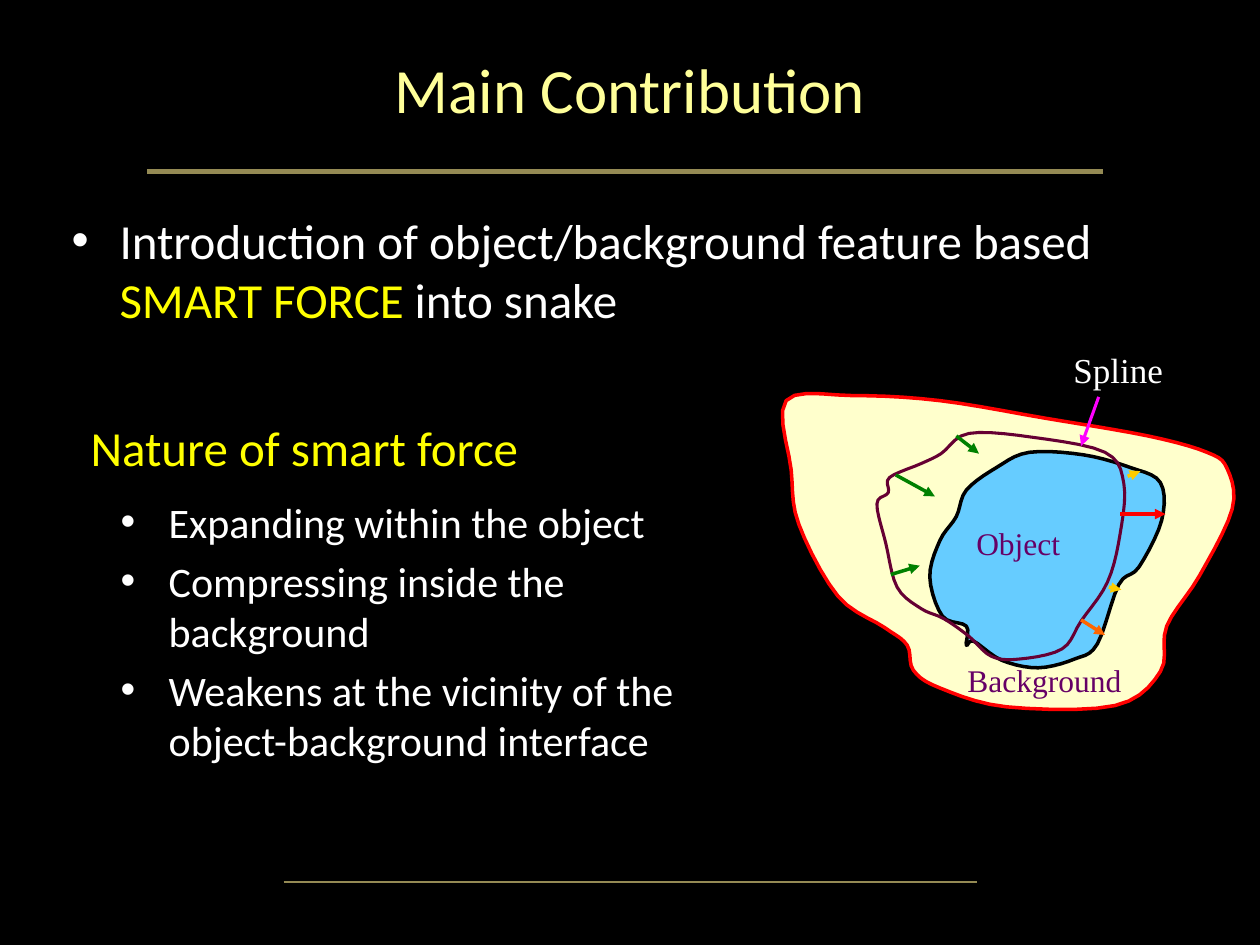
from dataclasses import dataclass
from typing import NamedTuple, Optional

from lxml.etree import SubElement as Sub
from pptx import Presentation
from pptx.dml.color import RGBColor as Rgb
from pptx.enum.shapes import MSO_CONNECTOR as Conn
from pptx.enum.text import MSO_ANCHOR as Anchor, PP_ALIGN as Align
from pptx.oxml.ns import qn
from pptx.util import Inches, Pt


@dataclass(frozen=True)
class Theme:
    sans: str = "Calibri"
    serif: str = "Times New Roman"
    black: str = "000000"
    white: str = "FFFFFF"
    yellow: str = "FFFF00"
    cream: str = "FFFF99"
    olive: str = "948A54"
    red: str = "FF0000"
    orange: str = "FF6600"
    green: str = "008000"
    gold: str = "FFCC00"
    pink: str = "FF00FF"
    purple: str = "660066"
    wine: str = "660033"
    sand: str = "FFFFCC"
    sky: str = "66CCFF"
    title: float = 36
    body: float = 28
    item: float = 24
    spline: float = 20
    label: float = 18


T = Theme()
Point = tuple[float, float]


class Line(NamedTuple):
    start: Point
    end: Point
    color: str
    width: float = 2
    arrow: bool = True


class Area(NamedTuple):
    points: list[Point]
    line: str
    fill: Optional[str] = None
    width: float = 2


class Label(NamedTuple):
    text: str
    box: tuple[float, float, float, float]
    size: float
    color: str


RULES = [
    Line((1.17, 1.36), (8.75, 1.36), T.olive, 3, False),
    Line((2.25, 7), (7.75, 7), T.olive, 1, False),
]
AREAS = [
    Area([  # background
        (6.24, 3.18), (6.28, 3.73), (6.34, 4.16), (6.65, 4.73),
        (7.02, 4.98), (7.2, 5.12), (7.25, 5.32), (7.46, 5.46),
        (7.99, 5.61), (8.85, 5.6), (9.21, 5.33), (9.26, 4.97),
        (9.52, 4.57), (9.78, 4.04), (9.74, 3.72), (9.58, 3.59),
        (9.11, 3.46), (8.3, 3.32), (7.46, 3.18), (6.77, 3.14),
    ], T.red, T.sand),
    Area([  # object
        (8.17, 3.59), (7.91, 3.71), (7.67, 3.89), (7.59, 4.1),
        (7.46, 4.29), (7.38, 4.58), (7.48, 4.89), (7.67, 4.97),
        (7.67, 5.12), (7.73, 5.09), (7.95, 5.24), (8.24, 5.3),
        (8.53, 5.23), (8.71, 5.11), (8.88, 4.64), (9.04, 4.5),
        (9.22, 4.13), (9.21, 3.83), (8.97, 3.71), (8.6, 3.61),
    ], T.black, T.sky),
    Area([  # spline
        (6.96, 4), (7.05, 3.91), (7.06, 3.79), (7.31, 3.68),
        (7.47, 3.6), (7.69, 3.44), (8.19, 3.47), (8.77, 3.59),
        (8.92, 3.84), (8.89, 4.24), (8.79, 4.62), (8.58, 4.93),
        (8.43, 5.15), (8.1, 5.23), (7.87, 5.21), (7.69, 5.05),
        (7.49, 4.91), (7.31, 4.83), (7.12, 4.66), (7.03, 4.31),
    ], T.wine, width=1.75),
]
FORCES = [
    Line((8.89, 4.08), (9.25, 4.08), T.red),
    Line((8.58, 4.92), (8.77, 5.04), T.orange),
    Line((7.11, 3.77), (7.42, 3.94), T.green),
    Line((7.07, 4.56), (7.3, 4.49), T.green),
    Line((7.59, 3.46), (7.77, 3.6), T.green),
    Line((8.95, 3.78), (9.05, 3.74), T.gold),
    Line((8.8, 4.66), (8.9, 4.68), T.gold),
]
LABELS = [
    Label("Object", (7.65, 4.11, 1, 0.4), T.label, T.purple),
    Label("Background", (7.58, 5.2, 1.58, 0.4), T.label, T.purple),
    Label("Spline", (8.42, 2.72, 1.18, 0.43), T.spline, T.white),
]
POINTER = Line((8.72, 3.15), (8.58, 3.54), T.pink, 1.75)
ITEMS = [
    "Expanding within the object",
    "Compressing inside the background",
    "Weakens at the vicinity of the object-background interface",
]


def rgb(color: str) -> Rgb:
    return Rgb.from_string(color)


def style(par, size: float, color: str, name: str = T.sans) -> None:
    font = par.font
    font.name, font.size, font.color.rgb = name, Pt(size), rgb(color)


def bullet(par, left: float) -> None:
    props = par._p.get_or_add_pPr()
    props.set("marL", str(Inches(left)))
    props.set("indent", str(Inches(-0.38)))
    Sub(props, qn("a:buFont"), typeface="Arial")
    Sub(props, qn("a:buChar"), char="•")


def add_box(slide, box: tuple, anchor=Anchor.TOP):
    frame = slide.shapes.add_textbox(*map(Inches, box)).text_frame
    frame.word_wrap, frame.vertical_anchor = True, anchor
    return frame


def add_line(slide, item: Line) -> None:
    ends = map(Inches, item.start + item.end)
    line = slide.shapes.add_connector(Conn.STRAIGHT, *ends)
    line.line.color.rgb, line.line.width = rgb(item.color), Pt(item.width)
    props = line._element.spPr
    if item.arrow:
        Sub(props.find(qn("a:ln")), qn("a:tailEnd"), type="triangle")
    Sub(props, qn("a:effectLst"))


def smooth(points: list[Point], steps: int = 5) -> list[Point]:
    """Trace a closed Catmull-Rom curve through the points."""
    def blend(a: float, b: float, c: float, d: float, t: float) -> float:
        return b + t / 2 * (c - a + t * (2 * a - 5 * b + 4 * c - d
                                         + t * (3 * (b - c) + d - a)))

    curve = []
    for i in range(len(points)):
        near = [points[(i + k) % len(points)] for k in range(-1, 3)]
        xs, ys = zip(*near)
        curve += [(blend(*xs, s / steps), blend(*ys, s / steps))
                  for s in range(steps)]
    return curve


def add_area(slide, area: Area) -> None:
    first, *rest = [(Inches(x), Inches(y)) for x, y in smooth(area.points)]
    pen = slide.shapes.build_freeform(*first)
    pen.add_line_segments(rest)
    shape = pen.convert_to_shape()
    shape.shadow.inherit = False
    shape.line.color.rgb, shape.line.width = rgb(area.line), Pt(area.width)
    if area.fill:
        shape.fill.solid()
        shape.fill.fore_color.rgb = rgb(area.fill)
    else:
        shape.fill.background()


def add_label(slide, label: Label) -> None:
    par = add_box(slide, label.box).paragraphs[0]
    par.text = label.text
    style(par, label.size, label.color, T.serif)


def add_title(slide) -> None:
    title = slide.shapes.title
    title.left, title.top, title.width, title.height = map(
        Inches, (0.75, 0.08, 8.5, 1.25))
    title.text_frame.vertical_anchor = Anchor.MIDDLE
    par = title.text_frame.paragraphs[0]
    par.text, par.alignment = "Main Contribution", Align.CENTER
    style(par, T.title, T.cream)


def add_body(slide) -> None:
    intro = add_box(slide, (0.47, 1.62, 9.21, 1.29)).paragraphs[0]
    bullet(intro, 0.38)
    style(intro, T.body, T.white)
    for text, color in [("Introduction of object/background feature based ", T.white),
                        ("SMART FORCE", T.yellow), (" into snake", T.white)]:
        run = intro.add_run()
        run.text, run.font.color.rgb = text, rgb(color)
    head = add_box(slide, (0.62, 2.92, 4.22, 1.25), Anchor.MIDDLE).paragraphs[0]
    head.text = "Nature of smart force"
    style(head, T.body, T.yellow)
    frame = add_box(slide, (0.36, 3.89, 5.79, 2.94))
    for i, text in enumerate(ITEMS):
        par = frame.add_paragraph() if i else frame.paragraphs[0]
        par.text, par.level = text, 1
        bullet(par, 0.88)
        if i:
            par.space_before = Pt(0.2 * T.item)
        style(par, T.item, T.white)


def main() -> None:
    deck = Presentation()
    deck.slide_width, deck.slide_height = Inches(10), Inches(7.5)
    slide = deck.slides.add_slide(deck.slide_layouts[5])
    slide.background.fill.solid()
    slide.background.fill.fore_color.rgb = rgb(T.black)
    add_title(slide)
    for area in AREAS:
        add_area(slide, area)
    for line in [*RULES, *FORCES, POINTER]:
        add_line(slide, line)
    for label in LABELS:
        add_label(slide, label)
    add_body(slide)
    deck.save("out.pptx")


if __name__ == "__main__":
    main()
